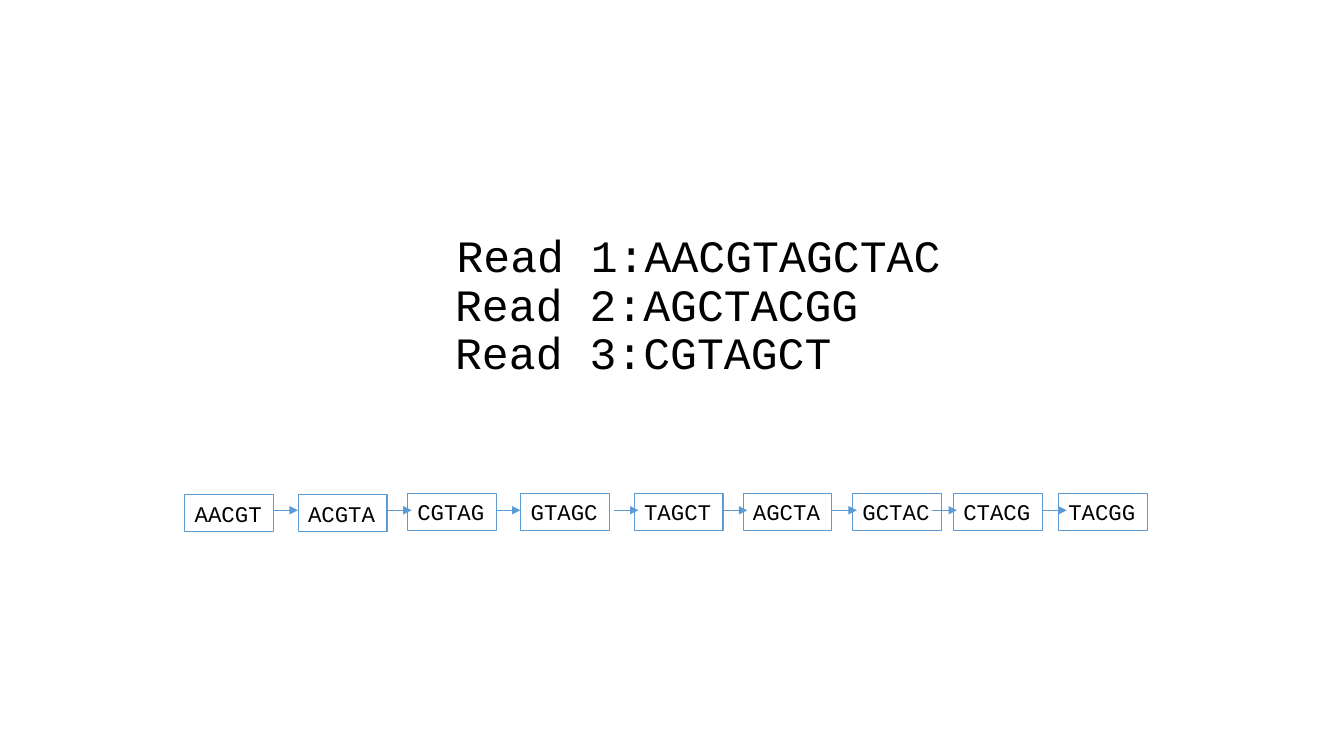
from lxml.etree import SubElement
from pptx import Presentation
from pptx.dml.color import RGBColor
from pptx.enum.shapes import MSO_CONNECTOR as CONNECTOR, MSO_SHAPE as SHAPE
from pptx.enum.text import MSO_AUTO_SIZE as AUTO_SIZE, PP_ALIGN as ALIGN
from pptx.oxml.ns import qn
from pptx.util import Pt

COLORS = {"text": "000000", "blue": "5B9BD5"}
FONT = "Courier New"

# Text, left, top, width
READS = [
    ("Read 1:AACGTAGCTAC", 319, 159, 364),
    ("Read 2:AGCTACGG", 318, 194, 306),
    ("Read 3:CGTAGCT", 318, 228.5, 286),
]

ASSEMBLY = "AACGTAGCTACGG"
K = 5
KMERS = [ASSEMBLY[i:i + K] for i in range(len(ASSEMBLY) - K + 1)]
KMER_LEFTS = [132, 213, 291, 372, 453, 530.75, 609, 681, 756]
KMER_TOPS = [353.25] * 2 + [352.25] * 7
KMER_WIDTH, KMER_HEIGHT = 63.5, 26.6

ARROW_STARTS = [195.25, 276.5, 354.25, 438.5, 516.25, 594.5, 666, 744.5]
ARROW_LENGTH, ARROW_Y = 17.5, 364.5


def write_line(shape, text, size):
    """Put one unwrapped line of left-aligned text into the shape."""
    frame = shape.text_frame
    frame.word_wrap = False
    frame.auto_size = AUTO_SIZE.SHAPE_TO_FIT_TEXT
    paragraph = frame.paragraphs[0]
    paragraph.alignment = ALIGN.LEFT
    run = paragraph.add_run()
    run.text = text
    run.font.name = FONT
    run.font.size = Pt(size)
    run.font.color.rgb = RGBColor.from_string(COLORS["text"])


presentation = Presentation()
presentation.slide_width = Pt(960)
presentation.slide_height = Pt(540)
slide = presentation.slides.add_slide(presentation.slide_layouts[6])

for text, left, top, width in READS:
    read_box = slide.shapes.add_textbox(Pt(left), Pt(top), Pt(width), Pt(46))
    write_line(read_box, text, 32)

for kmer, left, top in zip(KMERS, KMER_LEFTS, KMER_TOPS):
    kmer_box = slide.shapes.add_shape(
        SHAPE.RECTANGLE, Pt(left), Pt(top), Pt(KMER_WIDTH), Pt(KMER_HEIGHT))
    kmer_box.shadow.inherit = False
    kmer_box.fill.background()
    kmer_box.line.color.rgb = RGBColor.from_string(COLORS["blue"])
    kmer_box.line.width = Pt(0.75)
    write_line(kmer_box, kmer, 16)

for start in ARROW_STARTS:
    arrow = slide.shapes.add_connector(
        CONNECTOR.STRAIGHT, Pt(start), Pt(ARROW_Y),
        Pt(start + ARROW_LENGTH), Pt(ARROW_Y))
    arrow.line.color.rgb = RGBColor.from_string(COLORS["blue"])
    arrow.line.width = Pt(0.5)
    SubElement(arrow.line._get_or_add_ln(), qn("a:tailEnd"), type="triangle")
    SubElement(arrow._element.spPr, qn("a:effectLst"))

presentation.save("out.pptx")
